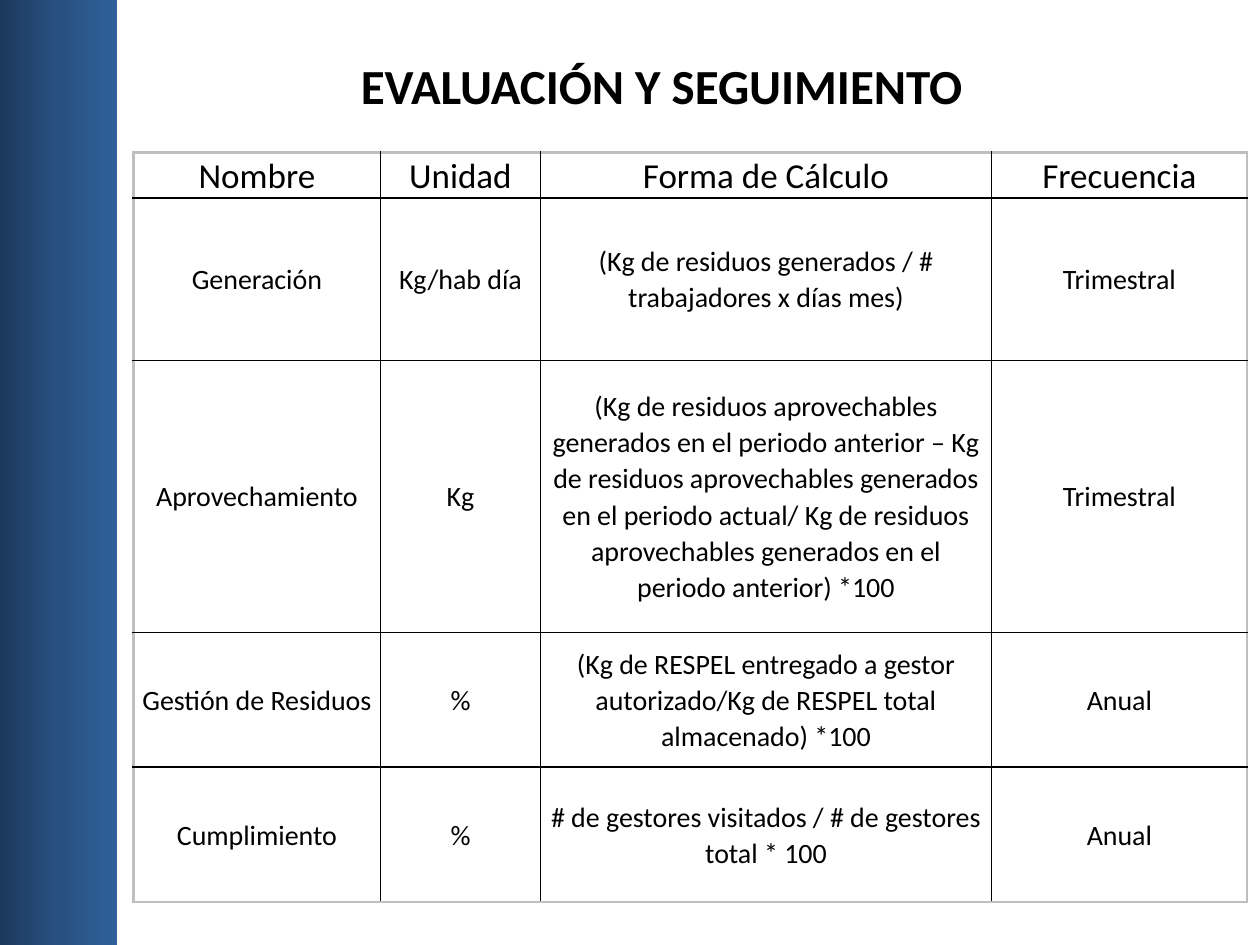
import copy
import pptx
import pptx.dml.color
import pptx.enum.shapes
import pptx.enum.text
import pptx.oxml
import pptx.oxml.ns
import pptx.util

CELL = pptx.util.Inches(0.1)
COLS, ROWS = 100, 75
MIDDLE = pptx.enum.text.MSO_ANCHOR.MIDDLE
CENTER = pptx.enum.text.PP_ALIGN.CENTER

THEME = {
    "font": "Calibri",
    "ink": "000000",
    "edge": "BFBFBF",
    "band": [(0, "1C395B"), (0.5, "285181"), (1, "306099")],
    "title": 28,
    "head": 20,
    "body": 16,
    "rule": 1,
    "rim": 1.5,
}

WIDTHS = [19.6, 12.7, 35.8, 20.3]
HEIGHTS = [3.6, 12.9, 21.6, 10.7, 10.7]
DATA = [
    ["Nombre", "Unidad", "Forma de Cálculo", "Frecuencia"],
    ["Generación", "Kg/hab día",
     "(Kg de residuos generados / # trabajadores x días mes)", "Trimestral"],
    ["Aprovechamiento", "Kg",
     "(Kg de residuos aprovechables generados en el periodo anterior – "
     "Kg de residuos aprovechables generados en el periodo actual/ "
     "Kg de residuos aprovechables generados en el periodo anterior) *100",
     "Trimestral"],
    ["Gestión de Residuos", "%",
     "(Kg de RESPEL entregado a gestor autorizado/Kg de RESPEL total "
     "almacenado) *100", "Anual"],
    ["Cumplimiento", "%",
     "# de gestores visitados / # de gestores total * 100", "Anual"],
]


def grid(*counts):
    return [round(count * CELL) for count in counts]


def put(item, values):
    for name, value in values.items():
        setattr(item, name, value)


def tint(code):
    return pptx.dml.color.RGBColor.from_string(code)


def write(frame, text, size, bold=False, lead=1):
    frame.word_wrap = True
    para = frame.paragraphs[0]
    run = para.add_run()
    run.text = text
    put(para, {"alignment": CENTER, "line_spacing": lead})
    put(run.font, {"name": THEME["font"], "size": pptx.util.Pt(size),
                   "bold": bold})
    run.font.color.rgb = tint(THEME["ink"])


def draw_band(slide):
    kind = pptx.enum.shapes.MSO_SHAPE.RECTANGLE
    band = slide.shapes.add_shape(kind, *grid(0, 0, 9.3, ROWS))
    band.shadow.inherit = False
    band.line.fill.background()
    band.fill.gradient()
    band.fill.gradient_angle = 0
    first = band.element.find(".//" + pptx.oxml.ns.qn("a:gs"))
    first.addnext(copy.deepcopy(first))
    for stop, (place, code) in zip(band.fill.gradient_stops, THEME["band"]):
        stop.position = place
        stop.color.rgb = tint(code)


def draw_title(slide):
    box = slide.shapes.add_textbox(*grid(7.5, 2.9, 90, 7.7))
    box.text_frame.vertical_anchor = MIDDLE
    write(box.text_frame, "EVALUACIÓN Y SEGUIMIENTO", THEME["title"], True)


def rule_cell(cell, rims):
    props = cell._tc.get_or_add_tcPr()
    for place, (side, rim) in enumerate(rims.items()):
        code = THEME["edge" if rim else "ink"]
        width = pptx.util.Pt(THEME["rim" if rim else "rule"])
        line = pptx.oxml.parse_xml(
            f'<a:ln{side} {pptx.oxml.ns.nsdecls("a")} w="{width}">'
            f'<a:solidFill><a:srgbClr val="{code}"/></a:solidFill>'
            f'</a:ln{side}>')
        props.insert(place, line)


def draw_table(slide):
    rows, cols = len(HEIGHTS), len(WIDTHS)
    spot = grid(10.6, 12.1, sum(WIDTHS), sum(HEIGHTS))
    table = slide.shapes.add_table(rows, cols, *spot).table
    put(table, {"first_row": False, "horz_banding": False})
    for col, width in zip(table.columns, grid(*WIDTHS)):
        col.width = width
    for row, height in zip(table.rows, grid(*HEIGHTS)):
        row.height = height
    side = grid(0.7)[0]
    form = {"vertical_anchor": MIDDLE, "margin_left": side,
            "margin_right": side, "margin_top": 0, "margin_bottom": 0}
    for r, line in enumerate(DATA):
        size = THEME["body" if r else "head"]
        for c, text in enumerate(line):
            cell = table.cell(r, c)
            put(cell, form)
            cell.fill.background()
            write(cell.text_frame, text, size, lead=1.06)
            rule_cell(cell, {"L": c == 0, "R": c == cols - 1,
                             "T": r == 0, "B": r == rows - 1})


def main():
    deck = pptx.Presentation()
    wide, high = grid(COLS, ROWS)
    put(deck, {"slide_width": wide, "slide_height": high})
    slide = deck.slides.add_slide(deck.slide_layouts[6])
    draw_band(slide)
    draw_title(slide)
    draw_table(slide)
    deck.save("out.pptx")


if __name__ == "__main__":
    main()
